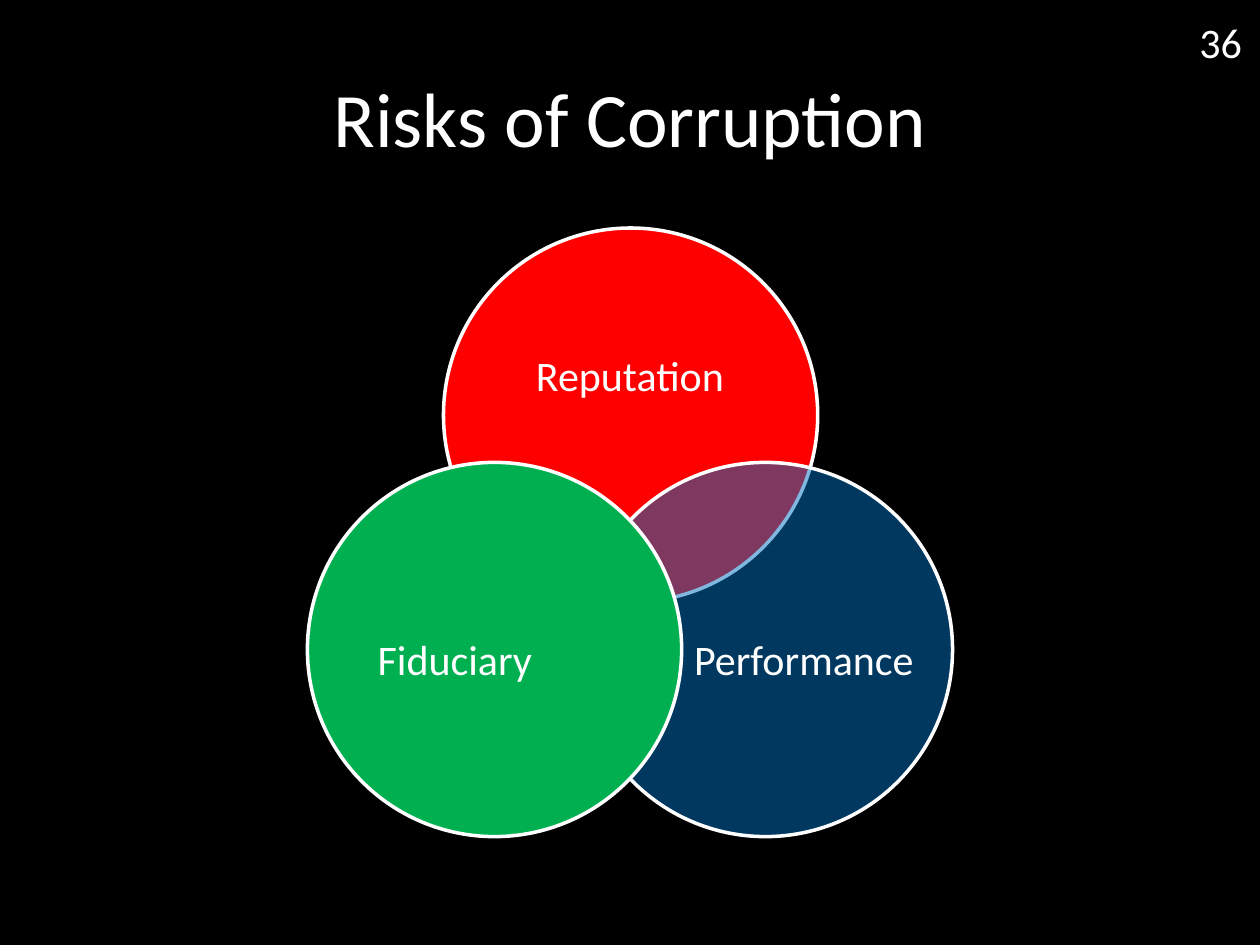
from lxml.etree import SubElement
from pptx import Presentation
from pptx.dml.color import RGBColor
from pptx.enum.shapes import MSO_SHAPE
from pptx.enum.text import MSO_ANCHOR, PP_ALIGN
from pptx.oxml.ns import qn
from pptx.util import Inches, Pt

COLORS = {
    "background": "000000",
    "text": "FFFFFF",
    "outline": "FFFFFF",
    "reputation": "FF0000",
    "performance": "0070C0",
    "fiduciary": "00B050",
}
DIAMETER = 2.97


def write_text(frame, text, size=24, align=PP_ALIGN.CENTER,
               anchor=MSO_ANCHOR.MIDDLE, margin=None, line_spacing=None):
    frame.word_wrap = True
    frame.vertical_anchor = anchor
    if margin is not None:
        frame.margin_left = frame.margin_right = Inches(margin)
        frame.margin_top = frame.margin_bottom = Inches(margin)
    paragraph = frame.paragraphs[0]
    paragraph.alignment = align
    paragraph.line_spacing = line_spacing
    run = paragraph.add_run()
    run.text = text
    run.font.name = "Calibri"
    run.font.size = Pt(size)
    run.font.color.rgb = RGBColor.from_string(COLORS["text"])


presentation = Presentation()
presentation.slide_width = Inches(10)
presentation.slide_height = Inches(7.5)
slide = presentation.slides.add_slide(presentation.slide_layouts[5])
slide.background.fill.solid()
slide.background.fill.fore_color.rgb = RGBColor.from_string(COLORS["background"])

page_number = slide.shapes.add_textbox(Inches(9.42), Inches(0.08), Inches(0.58), Inches(0.4))
write_text(page_number.text_frame, "36", align=PP_ALIGN.LEFT, anchor=MSO_ANCHOR.TOP)

heading = slide.shapes.title
heading.left, heading.top = Inches(0.5), Inches(0.3)
heading.width, heading.height = Inches(9), Inches(1.25)
write_text(heading.text_frame, "Risks of Corruption", size=44)

risks = [
    ("Reputation", "reputation", 100, (3.52, 1.81), (3.91, 2.33, 2.18, 1.34)),
    ("Performance", "performance", 50, (4.59, 3.67), (5.49, 4.44, 1.78, 1.63)),
    ("Fiduciary", "fiduciary", 100, (2.44, 3.67), (2.72, 4.44, 1.78, 1.63)),
]
for risk, color, opacity, (left, top), label_box in risks:
    circle = slide.shapes.add_shape(
        MSO_SHAPE.OVAL, Inches(left), Inches(top), Inches(DIAMETER), Inches(DIAMETER))
    circle.shadow.inherit = False
    circle.fill.solid()
    circle.fill.fore_color.rgb = RGBColor.from_string(COLORS[color])
    circle.line.color.rgb = RGBColor.from_string(COLORS["outline"])
    circle.line.width = Pt(2)
    if opacity < 100:
        fill_color = circle._element.spPr.find(qn("a:solidFill")).find(qn("a:srgbClr"))
        SubElement(fill_color, qn("a:alpha"), val=str(opacity * 1000))

    label = slide.shapes.add_textbox(*(Inches(length) for length in label_box))
    write_text(label.text_frame, risk, margin=0, line_spacing=0.9)

presentation.save("out.pptx")
